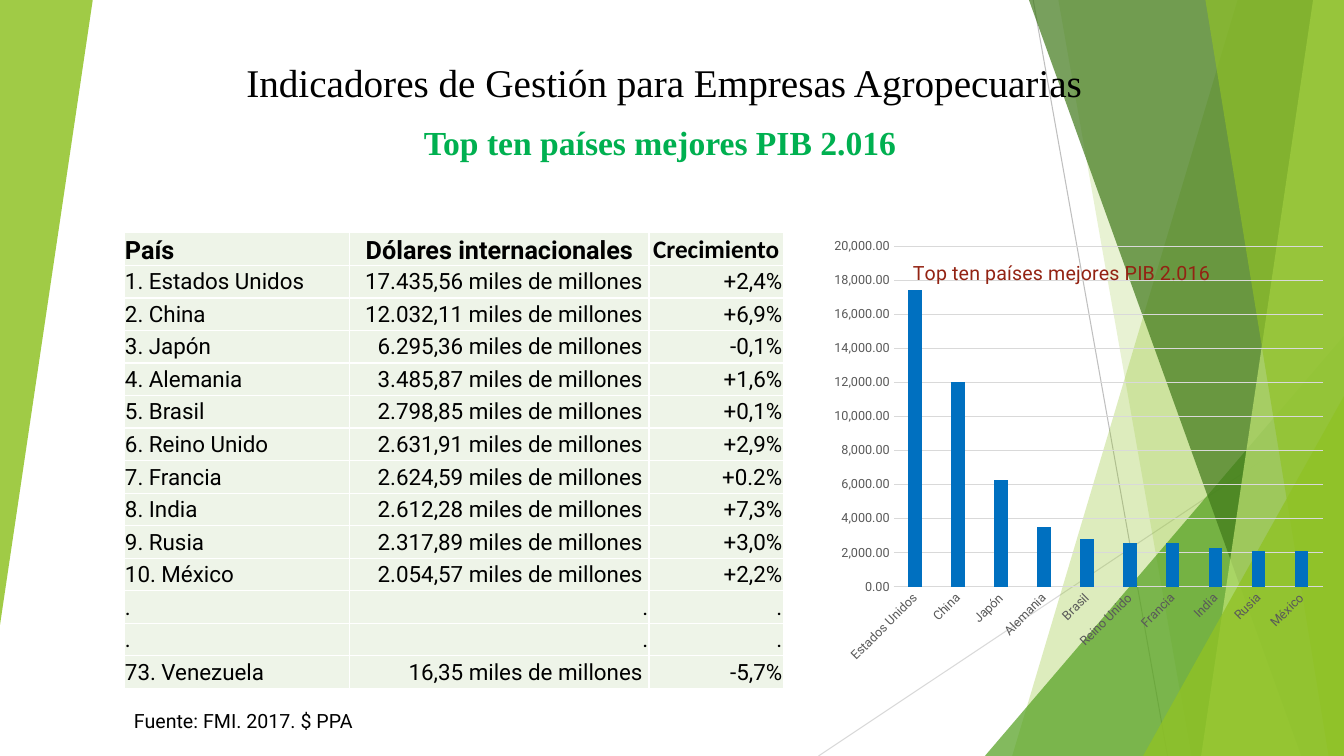
"""Build a slide on the ten largest economies with a table and a column chart."""
import lxml.etree
import pptx
import pptx.chart.data
import pptx.dml.color
import pptx.enum.chart
import pptx.enum.shapes
import pptx.enum.text
import pptx.oxml.ns
import pptx.util

Pt = pptx.util.Pt
qn = pptx.oxml.ns.qn
ALIGN = pptx.enum.text.PP_ALIGN
ANCHOR = pptx.enum.text.MSO_ANCHOR
NONE = pptx.enum.chart.XL_TICK_MARK.NONE

WIDE, HIGH = 960, 540
COLORS = {
    "lime": "90C226", "leaf": "54A021", "forest": "3F7819", "pale": "C0E474",
    "gray": "BFBFBF", "rule": "D9D9D9", "label": "595959", "cell": "EEF4E8",
    "black": "000000", "white": "FFFFFF", "green": "00B050", "red": "932313",
    "blue": "0070C0",
}
SERIF, SANS = "Times New Roman", "Roboto"

LINES = [((738, 0), (834, HIGH), "gray"), ((WIDE, 290), (584.64, HIGH), "rule")]
SLABS = [
    ("slab", (884, 723), "lime", 30),
    ("slab", (756, 851), "lime", 20),
    ("wedge", (703.5, 239.8), "leaf", 72),
    ("slab", (735, 929.5), "forest", 70),
    ("slab", (938, 858), "pale", 70),
    ("slab", (861, 949), "lime", 65),
    ("wedge", (816.5, 283), "lime", 80),
    ("corner", (66.24, 446.4), "lime", 85),
]

TITLE = "Indicadores de Gestión para Empresas Agropecuarias"
TOPIC = "Top ten países mejores PIB 2.016"
SOURCE = "Fuente: FMI. 2017. $ PPA"
HEADS = ("País", "Dólares internacionales", "Crecimiento")
UNIT = " miles de millones "
ROWS = [
    ("1. Estados Unidos", "17.435,56" + UNIT, "+2,4%"),
    ("2. China", "12.032,11" + UNIT, "+6,9%"),
    ("3. Japón", "6.295,36" + UNIT, "-0,1%"),
    ("4. Alemania", "3.485,87" + UNIT, "+1,6%"),
    ("5. Brasil", "2.798,85" + UNIT, "+0,1%"),
    ("6. Reino Unido", "2.631,91" + UNIT, "+2,9%"),
    ("7. Francia", "2.624,59" + UNIT, "+0.2%"),
    ("8. India", "2.612,28" + UNIT, "+7,3%"),
    ("9. Rusia", "2.317,89" + UNIT, "+3,0%"),
    ("10. México", "2.054,57" + UNIT, "+2,2%"),
    (".", ".", "."),
    (".", ".", "."),
    ("73. Venezuela", "16,35" + UNIT, "-5,7%"),
]
WIDTHS, ROW_HIGH = (161.3, 213.8, 95.8), 23.25
VALUES = {
    "Estados Unidos": 17400, "China": 12000, "Japón": 6300, "Alemania": 3500,
    "Brasil": 2800, "Reino Unido": 2600, "Francia": 2600, "India": 2300,
    "Rusia": 2100, "México": 2100,
}


def tint(name):
    return pptx.dml.color.RGBColor.from_string(COLORS[name])


def style(font, size, color, face=SANS, bold=False):
    font.size, font.name, font.bold = Pt(size), face, bold
    font.color.rgb = tint(color)


def write(frame, text, size=16, color="black", face=SANS, bold=False,
          align=ALIGN.LEFT, more=False, before=0):
    para = frame.add_paragraph() if more else frame.paragraphs[0]
    para.alignment = align
    para.space_before = Pt(before)
    run = para.add_run()
    run.text = text
    style(run.font, size, color, face, bold)


def draw_line(shapes, start, end, color):
    line = shapes.add_connector(pptx.enum.shapes.MSO_CONNECTOR.STRAIGHT,
                                *map(Pt, start + end))
    line.line.color.rgb = tint(color)
    line.line.width = Pt(0.75)
    lxml.etree.SubElement(line._element.spPr, qn("a:effectLst"))


def draw_slab(shapes, kind, spot, color, alpha):
    left, top = spot
    if kind == "slab":
        pen = shapes.build_freeform(Pt(left), 0, scale=1.0)
        ends = [(WIDE, 0), (WIDE, HIGH), (top, HIGH)]
        pen.add_line_segments([(Pt(x), Pt(y)) for x, y in ends], close=True)
        shape = pen.convert_to_shape()
    else:
        corner = kind == "corner"
        box = (0, 0, left, top) if corner else (left, top, WIDE - left, HIGH - top)
        shape = shapes.add_shape(
            pptx.enum.shapes.MSO_SHAPE.ISOSCELES_TRIANGLE, *map(Pt, box))
        shape.adjustments[0] = 1
        shape.rotation = 180 if corner else 0
    shape.shadow.inherit = False
    shape.fill.solid()
    shape.fill.fore_color.rgb = tint(color)
    shape.line.fill.background()
    paint = shape._element.spPr.find(".//" + qn("a:srgbClr"))
    lxml.etree.SubElement(paint, qn("a:alpha"), val=str(alpha * 1000))


def fill_cell(cell, text, **form):
    cell.margin_left = cell.margin_right = cell.margin_top = Pt(0.72)
    cell.margin_bottom = 0
    props = cell._tc.get_or_add_tcPr()
    for side in ("a:lnL", "a:lnR", "a:lnT", "a:lnB"):
        edge = lxml.etree.SubElement(props, qn(side), w=str(Pt(1)))
        solid = lxml.etree.SubElement(edge, qn("a:solidFill"))
        lxml.etree.SubElement(solid, qn("a:srgbClr"), val=COLORS["white"])
    cell.fill.solid()
    cell.fill.fore_color.rgb = tint("cell")
    write(cell.text_frame, text, **form)


def draw_table(shapes):
    table = shapes.add_table(len(ROWS) + 1, len(HEADS), Pt(88.56), Pt(166.3),
                             Pt(sum(WIDTHS)), Pt(ROW_HIGH * (len(ROWS) + 1))).table
    table.first_row = table.horz_banding = False
    for col, width in zip(table.columns, WIDTHS):
        col.width = Pt(width)
    for r, row in enumerate([HEADS] + ROWS):
        table.rows[r].height = Pt(ROW_HIGH)
        for c, text in enumerate(row):
            cell = table.cell(r, c)
            if r == 0:
                cell.vertical_anchor = ANCHOR.BOTTOM
                form = {"size": 18, "bold": True, "face": "Calibri" if c == 2 else SANS,
                        "align": ALIGN.CENTER if c else ALIGN.LEFT}
            else:
                cell.vertical_anchor = ANCHOR.MIDDLE
                form = {"align": ALIGN.RIGHT if c else ALIGN.LEFT}
            fill_cell(cell, text, **form)


def place(holder, **parts):
    spot = holder.find(qn("c:layout"))
    if spot is None:
        spot = holder.makeelement(qn("c:layout"))
        holder.insert(0, spot)
    manual = lxml.etree.SubElement(spot, qn("c:manualLayout"))
    for name, value in parts.items():
        lxml.etree.SubElement(manual, qn("c:" + name), val=str(value))


def draw_chart(shapes):
    data = pptx.chart.data.CategoryChartData()
    data.categories = list(VALUES)
    data.add_series("Series 1", list(VALUES.values()))
    chart = shapes.add_chart(pptx.enum.chart.XL_CHART_TYPE.COLUMN_CLUSTERED,
                             Pt(571), Pt(169.2), Pt(374.4), Pt(333.4), data).chart
    style(chart.font, 10, "black")
    chart.has_legend = False
    chart.has_title = True
    write(chart.chart_title.text_frame, TOPIC, size=14, color="red", align=ALIGN.CENTER)
    title = chart.chart_title._element
    place(title, xMode="edge", yMode="edge", x=0.21, y=0.04)
    title.find(qn("c:overlay")).set("val", "1")
    place(chart._chartSpace.find(".//" + qn("c:plotArea")), layoutTarget="inner",
          xMode="edge", yMode="edge", x=0.18, y=0.02, w=0.82, h=0.73)
    plot = chart.plots[0]
    plot.gap_width, plot.overlap, plot.vary_by_categories = 219, -27, False
    bars = plot.series[0].format.fill
    bars.solid()
    bars.fore_color.rgb = tint("blue")
    cats, vals = chart.category_axis, chart.value_axis
    for axis in (cats, vals):
        axis.major_tick_mark = axis.minor_tick_mark = NONE
        style(axis.tick_labels.font, 9, "label")
    cats._element.find(qn("c:txPr")).find(qn("a:bodyPr")).set("rot", "-2700000")
    vals.minimum_scale, vals.maximum_scale, vals.major_unit = 0, 20000, 2000
    vals.tick_labels.number_format = "#,##0.00"
    vals.tick_labels.number_format_is_linked = False
    vals.format.line.fill.background()
    for line in (cats.format.line, vals.major_gridlines.format.line):
        line.color.rgb = tint("rule")
        line.width = Pt(0.75)


def main():
    deck = pptx.Presentation()
    deck.slide_width, deck.slide_height = Pt(WIDE), Pt(HIGH)
    slide = deck.slides.add_slide(deck.slide_layouts[5])
    shapes = slide.shapes
    for line in LINES:
        draw_line(shapes, *line)
    for slab in SLABS:
        draw_slab(shapes, *slab)
    title = shapes.title
    title.left, title.top, title.width, title.height = map(Pt, (162.7, 37.4, 623.5, 82.1))
    shapes._spTree.append(title._element)
    frame = title.text_frame
    frame.vertical_anchor = ANCHOR.BOTTOM
    write(frame, TITLE, size=28, face=SERIF, align=ALIGN.CENTER)
    write(frame, TOPIC + " ", size=24, face=SERIF, color="green", bold=True,
          align=ALIGN.CENTER, more=True, before=12)
    draw_table(shapes)
    draw_chart(shapes)
    note = shapes.add_textbox(Pt(88.56), Pt(502.6), Pt(272), Pt(24.5)).text_frame
    note.word_wrap = True
    write(note, SOURCE, size=14)
    deck.save("out.pptx")


if __name__ == "__main__":
    main()
